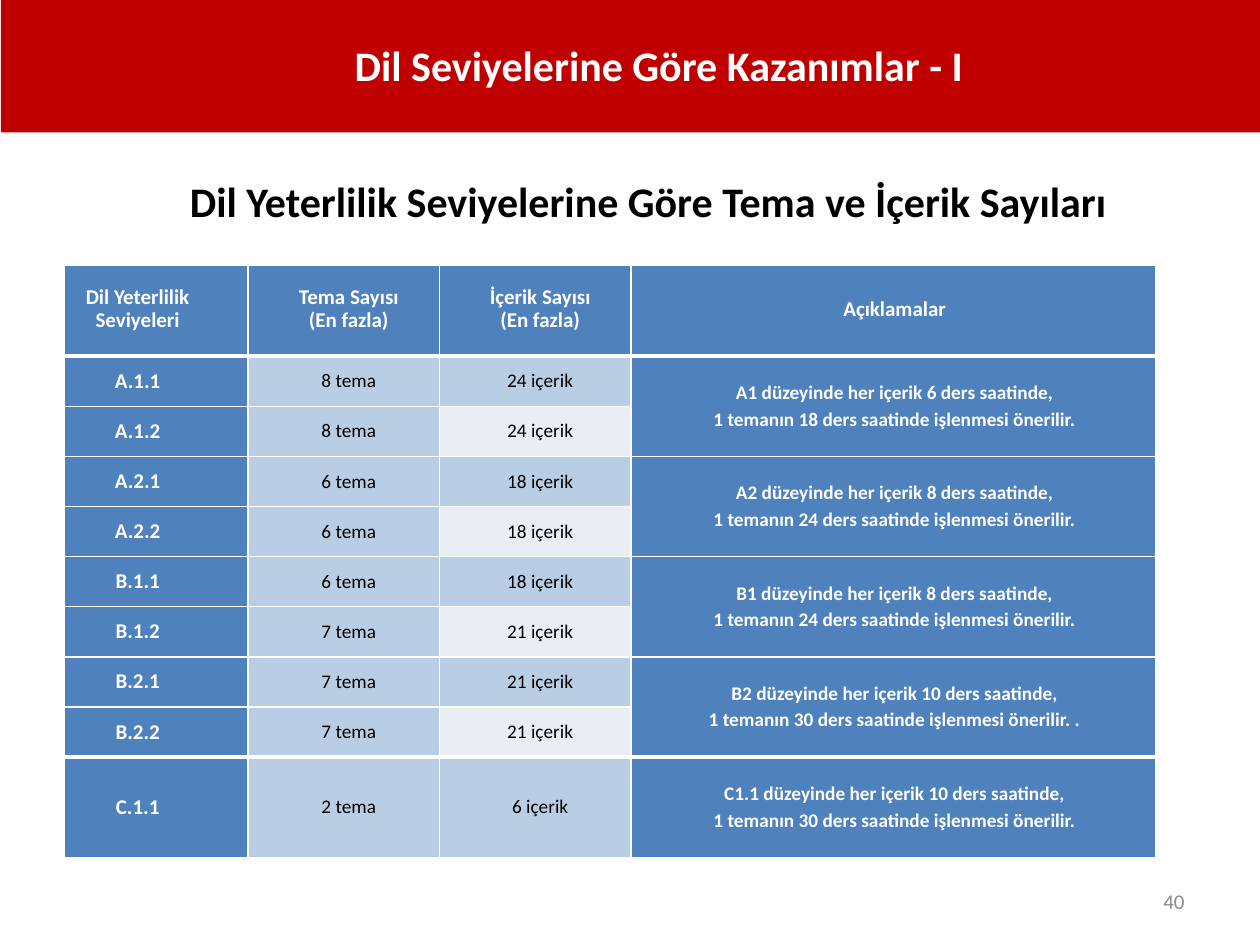
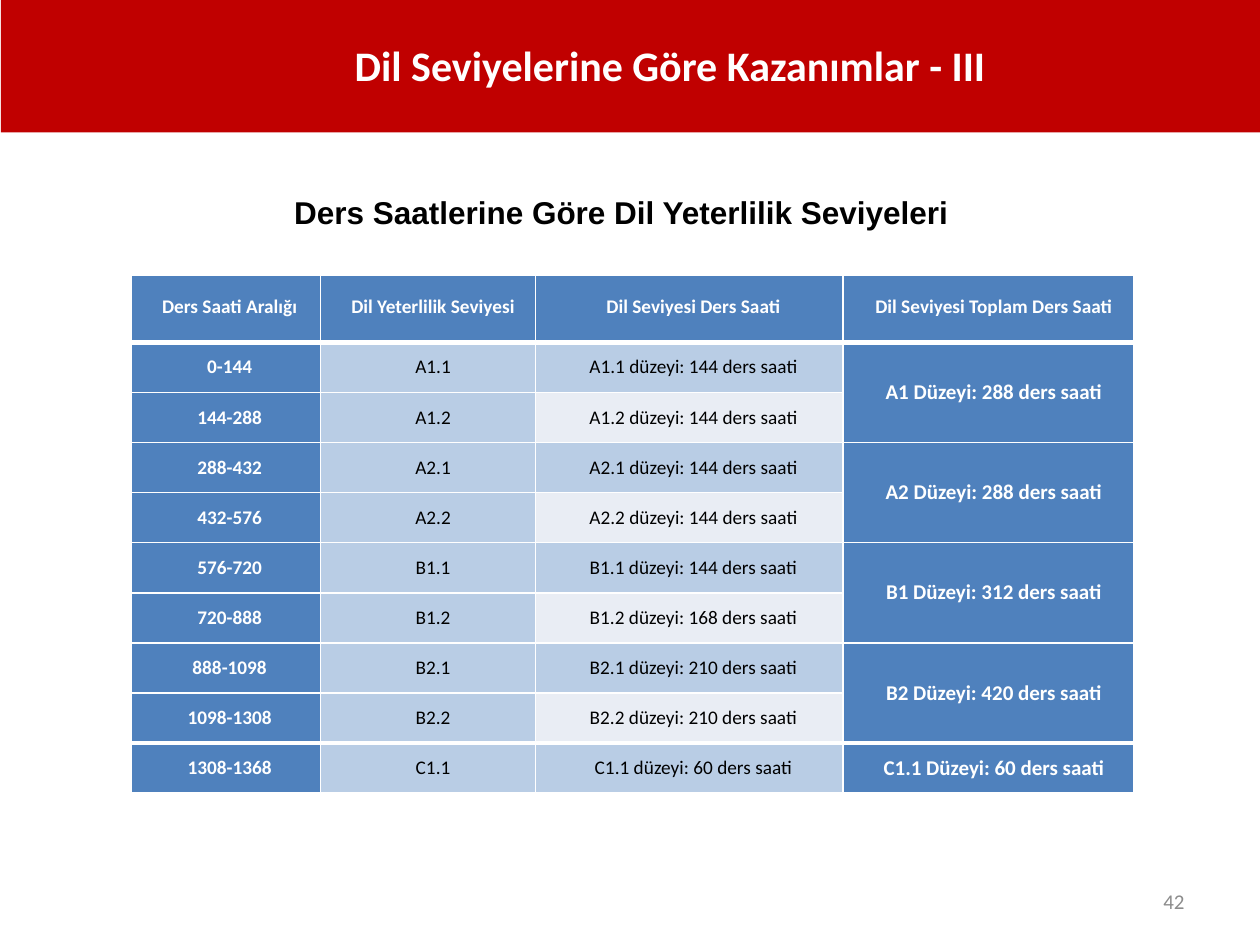
from lxml import etree
from pptx import Presentation
from pptx.dml.color import RGBColor
from pptx.enum import shapes, text
from pptx.oxml import ns
from pptx.util import Cm, Pt

RED = RGBColor(0xC0, 0x00, 0x00)
WHITE = RGBColor(0xFF, 0xFF, 0xFF)
BLACK = RGBColor(0x00, 0x00, 0x00)
GRAY = RGBColor(0x8C, 0x8C, 0x8C)
BLUE = RGBColor(0x4F, 0x81, 0xBD)
LIGHT_BLUE = RGBColor(0xB9, 0xCD, 0xE5)
PALE = RGBColor(0xE9, 0xED, 0xF4)

ROW_HEIGHT = 1.01
LEVEL_COUNT = 9

THEMES = [8, 8, 6, 6, 6, 7, 7, 7, 2]
THEME_LEVELS = ["A.1.1", "A.1.2", "A.2.1", "A.2.2", "B.1.1", "B.1.2", "B.2.1", "B.2.2", "C.1.1"]
THEME_NOTES = [
    "A1 düzeyinde her içerik 6 ders saatinde,\n1 temanın 18 ders saatinde işlenmesi önerilir.",
    "A2 düzeyinde her içerik 8 ders saatinde,\n1 temanın 24 ders saatinde işlenmesi önerilir.",
    "B1 düzeyinde her içerik 8 ders saatinde,\n1 temanın 24 ders saatinde işlenmesi önerilir.",
    "B2 düzeyinde her içerik 10 ders saatinde,\n1 temanın 30 ders saatinde işlenmesi önerilir. .",
    "C1.1 düzeyinde her içerik 10 ders saatinde,\n1 temanın 30 ders saatinde işlenmesi önerilir.",
]
HOUR_RANGES = ["0-144", "144-288", "288-432", "432-576", "576-720", "720-888",
               "888-1098", "1098-1308", "1308-1368"]
HOUR_LEVELS = ["A1.1", "A1.2", "A2.1", "A2.2", "B1.1", "B1.2", "B2.1", "B2.2", "C1.1"]
LEVEL_HOURS = [144, 144, 144, 144, 144, 168, 210, 210, 60]
TOTAL_HOURS = {"A1": 288, "A2": 288, "B1": 312, "B2": 420, "C1.1": 60}


def format_text(paragraph, size, color, bold=False, font="Calibri"):
    for run in paragraph.runs:
        run.font.name = font
        run.font.size = Pt(size)
        run.font.bold = bold
        run.font.color.rgb = color


def add_label(slide, box, label, size, color, **style):
    """Add one line of text, centred vertically in the box."""
    text_box = slide.shapes.add_textbox(*map(Cm, box))
    frame = text_box.text_frame
    frame.word_wrap = True
    frame.vertical_anchor = text.MSO_ANCHOR.MIDDLE
    frame.text = label
    format_text(frame.paragraphs[0], size, color, **style)
    return frame.paragraphs[0]


def add_title_band(slide, title):
    band = slide.shapes.add_shape(shapes.MSO_SHAPE.RECTANGLE, Cm(0.02), Cm(-0.05), Cm(25.4), Cm(2.72))
    band.shadow.inherit = False
    band.fill.solid()
    band.fill.fore_color.rgb = RED
    band.line.fill.background()
    frame = band.text_frame
    frame.margin_left = Cm(7.13)
    frame.vertical_anchor = text.MSO_ANCHOR.MIDDLE
    frame.text = title
    paragraph = frame.paragraphs[0]
    paragraph.alignment = text.PP_ALIGN.LEFT
    format_text(paragraph, 24, WHITE, bold=True)


def add_page_number(slide, number):
    paragraph = add_label(slide, (18.21, 17.65, 5.92, 1.02), str(number), 12, GRAY)
    paragraph.alignment = text.PP_ALIGN.RIGHT


def set_borders(cell, top, bottom):
    """Draw white cell borders; top and bottom are widths in points."""
    properties = cell._tc.get_or_add_tcPr()
    for side, width in (("L", 1), ("R", 1), ("T", top), ("B", bottom)):
        line = etree.SubElement(properties, ns.qn(f"a:ln{side}"), w=str(Pt(width)))
        fill = etree.SubElement(line, ns.qn("a:solidFill"))
        etree.SubElement(fill, ns.qn("a:srgbClr"), val=str(WHITE))


def style_cell(cell, fill, size, margins, line_spacing=None):
    cell.margin_top = cell.margin_bottom = 0
    cell.margin_left, cell.margin_right = map(Cm, margins)
    cell.vertical_anchor = text.MSO_ANCHOR.MIDDLE
    cell.fill.solid()
    cell.fill.fore_color.rgb = fill
    for index, paragraph in enumerate(cell.text_frame.paragraphs):
        paragraph.alignment = text.PP_ALIGN.CENTER
        if line_spacing:
            paragraph.line_spacing = Pt(line_spacing)
        elif index:
            paragraph.space_before = Pt(1.5)
        dark = fill == BLUE
        format_text(paragraph, size, WHITE if dark else BLACK, bold=dark)


def add_level_table(slide, left, top, widths, header, columns, sizes, margins,
                    header_size, header_height, last_height):
    """Add a table of levels; each pair of levels shares a cell in the last column."""
    frame = slide.shapes.add_table(LEVEL_COUNT + 1, len(header), Cm(left), Cm(top), Cm(sum(widths)),
                                   Cm(header_height + 8 * ROW_HEIGHT + last_height))
    table = frame.table
    for column, width in zip(table.columns, widths):
        column.width = Cm(width)
    heights = [header_height] + [ROW_HEIGHT] * (LEVEL_COUNT - 1) + [last_height]
    last_column = len(header) - 1
    for row_index, height in enumerate(heights):
        table.rows[row_index].height = Cm(height)
        is_header = row_index == 0
        for column_index in range(len(header)):
            cell = table.cell(row_index, column_index)
            if is_header:
                cell.text_frame.text = header[column_index]
            elif column_index < last_column:
                cell.text_frame.text = columns[column_index][row_index - 1]
            elif row_index % 2:
                cell.text_frame.text = columns[last_column][row_index // 2]
            if is_header or column_index in (0, last_column):
                fill = BLUE
            else:
                fill = PALE if column_index == 2 and row_index % 2 == 0 else LIGHT_BLUE
            set_borders(cell, 3 if row_index in (1, LEVEL_COUNT) else 1,
                        3 if row_index in (0, LEVEL_COUNT - 1) else 1)
            style_cell(cell, fill, header_size if is_header else sizes[column_index],
                       margins[column_index], header_size * 1.1 if is_header else None)
    for row_index in range(1, LEVEL_COUNT, 2):
        table.cell(row_index, last_column).merge(table.cell(row_index + 1, last_column))


def build_theme_slide(slide):
    add_title_band(slide, "Dil Seviyelerine Göre Kazanımlar - I")
    add_label(slide, (3.58, 3.3, 20.5, 1.5),
              "Dil Yeterlilik Seviyelerine Göre Tema ve İçerik Sayıları", 24, BLACK, bold=True)
    add_level_table(
        slide, 1.3, 5.34, (3.7, 3.86, 3.86, 10.58),
        ("Dil Yeterlilik\nSeviyeleri", "Tema Sayısı\n(En fazla)", "İçerik Sayısı\n(En fazla)", "Açıklamalar"),
        (THEME_LEVELS, [f"{count} tema" for count in THEMES],
         [f"{3 * count} içerik" for count in THEMES], THEME_NOTES),
        sizes=(12, 11, 11, 11), margins=((0, 0.75), (0.2, 0), (0.2, 0), (0.05, 0)),
        header_size=12, header_height=1.84, last_height=2.03)
    add_page_number(slide, 40)


def build_hours_slide(slide):
    add_title_band(slide, "Dil Seviyelerine Göre Kazanımlar - III")
    add_label(slide, (5.68, 3.53, 17, 1.5),
              "Ders Saatlerine Göre Dil Yeterlilik Seviyeleri", 18, BLACK, bold=True, font="Arial")
    add_level_table(
        slide, 2.65, 5.54, (3.81, 4.34, 6.19, 5.87),
        ("Ders Saati Aralığı", "Dil Yeterlilik Seviyesi", "Dil Seviyesi Ders Saati",
         "Dil Seviyesi Toplam Ders Saati"),
        (HOUR_RANGES, HOUR_LEVELS,
         [f"{level} düzeyi: {hours} ders saati" for level, hours in zip(HOUR_LEVELS, LEVEL_HOURS)],
         [f"{level} Düzeyi: {hours} ders saati" for level, hours in TOTAL_HOURS.items()]),
        sizes=(11, 11, 11, 12), margins=((0.15, 0), (0.2, 0), (0.17, 0), (0.22, 0)),
        header_size=11, header_height=1.36, last_height=ROW_HEIGHT)
    add_page_number(slide, 42)


def main():
    presentation = Presentation()
    presentation.slide_width, presentation.slide_height = Cm(25.4), Cm(19.05)
    blank = presentation.slide_layouts[6]
    for build_slide in (build_theme_slide, build_hours_slide):
        build_slide(presentation.slides.add_slide(blank))
    presentation.save("out.pptx")


if __name__ == "__main__":
    main()
